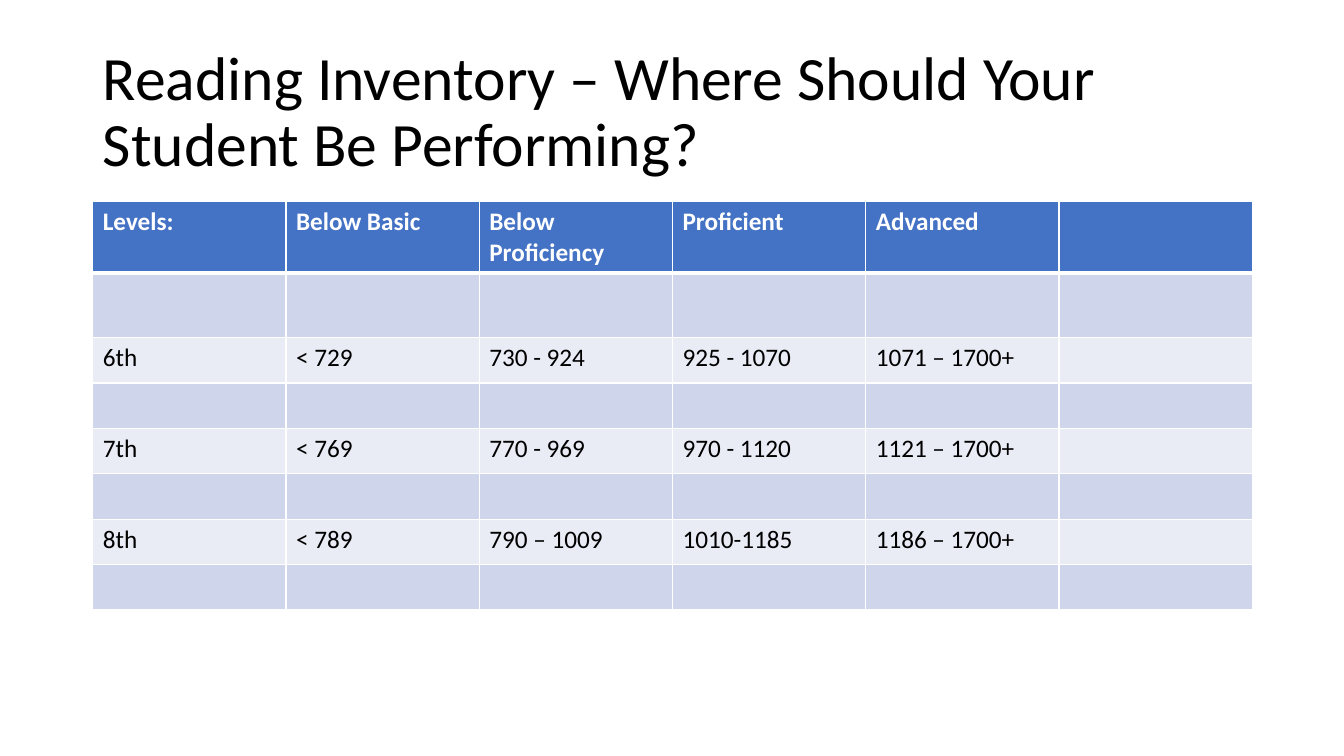
from lxml import etree
from pptx import Presentation
from pptx.dml.color import RGBColor
from pptx.enum import text
from pptx.oxml import ns
from pptx.util import Inches, Pt

TITLE = "Reading Inventory – Where Should Your Student Be Performing?"
HEADINGS = ("Levels:", "Below Basic", "Below Proficiency", "Proficient", "Advanced", "")
GRADES = (
    ("6th", "< 729", "730 - 924", "925 - 1070", "1071 – 1700+", ""),
    ("7th", "< 769", "770 - 969", "970 - 1120", "1121 – 1700+", ""),
    ("8th", "< 789", "790 – 1009", "1010-1185", "1186 – 1700+", ""),
)
SPACER = ("",) * len(HEADINGS)

FONT = "Calibri"
BLACK = RGBColor(0x00, 0x00, 0x00)
WHITE = RGBColor(0xFF, 0xFF, 0xFF)
HEADER_BLUE = RGBColor(0x44, 0x72, 0xC4)
DARK_BAND = RGBColor(0xCF, 0xD5, 0xEA)
LIGHT_BAND = RGBColor(0xE9, 0xEB, 0xF5)

LEFT, WIDTH = 0.92, 11.5
TABLE_TOP, TABLE_HEIGHT = 2, 4.03
ROW_HEIGHT, FIRST_SPACER_HEIGHT = 0.45, 0.64
THIN, THICK = 1, 3


def add_run(para, words, size, color, bold=False):
    """Add one formatted run to a paragraph."""
    span = para.add_run()
    span.text = words
    span.font.name = FONT
    span.font.size = Pt(size)
    span.font.bold = bold
    span.font.color.rgb = color


def set_borders(cell, top, bottom):
    """Draw white borders round a cell, with widths in points."""
    properties = cell._tc.get_or_add_tcPr()
    for side, width in (("L", THIN), ("R", THIN), ("T", top), ("B", bottom)):
        line = etree.SubElement(properties, ns.qn(f"a:ln{side}"), w=str(Pt(width)))
        fill = etree.SubElement(line, ns.qn("a:solidFill"))
        etree.SubElement(fill, ns.qn("a:srgbClr"), val=str(WHITE))


def add_title(page):
    """Fill and place the title placeholder."""
    box = page.shapes.title
    box.left, box.top = Inches(LEFT), Inches(0.4)
    box.width, box.height = Inches(WIDTH), Inches(1.45)
    frame = box.text_frame
    frame.word_wrap = True
    frame.auto_size = text.MSO_AUTO_SIZE.NONE
    frame.vertical_anchor = text.MSO_ANCHOR.MIDDLE
    para = frame.paragraphs[0]
    para.alignment = text.PP_ALIGN.LEFT
    para.line_spacing = 0.9
    add_run(para, TITLE, 44, BLACK)


def add_levels_table(page):
    """Build the score table, with a spacer row around each grade."""
    rows = [HEADINGS, SPACER]
    for grade in GRADES:
        rows += [grade, SPACER]
    box = page.shapes.add_table(
        len(rows), len(HEADINGS), Inches(LEFT), Inches(TABLE_TOP),
        Inches(WIDTH), Inches(TABLE_HEIGHT))
    table = box.table
    for row in table.rows:
        row.height = Inches(ROW_HEIGHT)
    table.rows[1].height = Inches(FIRST_SPACER_HEIGHT)
    box.height = Inches(TABLE_HEIGHT)
    for r, row in enumerate(rows):
        header = r == 0
        band = HEADER_BLUE if header else DARK_BAND if r % 2 else LIGHT_BAND
        for c, words in enumerate(row):
            cell = table.cell(r, c)
            set_borders(cell, THICK if r == 1 else THIN, THICK if header else THIN)
            cell.fill.solid()
            cell.fill.fore_color.rgb = band
            if words:
                add_run(cell.text_frame.paragraphs[0], words, 18,
                        WHITE if header else BLACK, header)


def main():
    """Create the reading levels slide."""
    deck = Presentation()
    deck.slide_width, deck.slide_height = Inches(13.33), Inches(7.5)
    page = deck.slides.add_slide(deck.slide_layouts[5])
    add_title(page)
    add_levels_table(page)
    deck.save("out.pptx")


if __name__ == "__main__":
    main()
